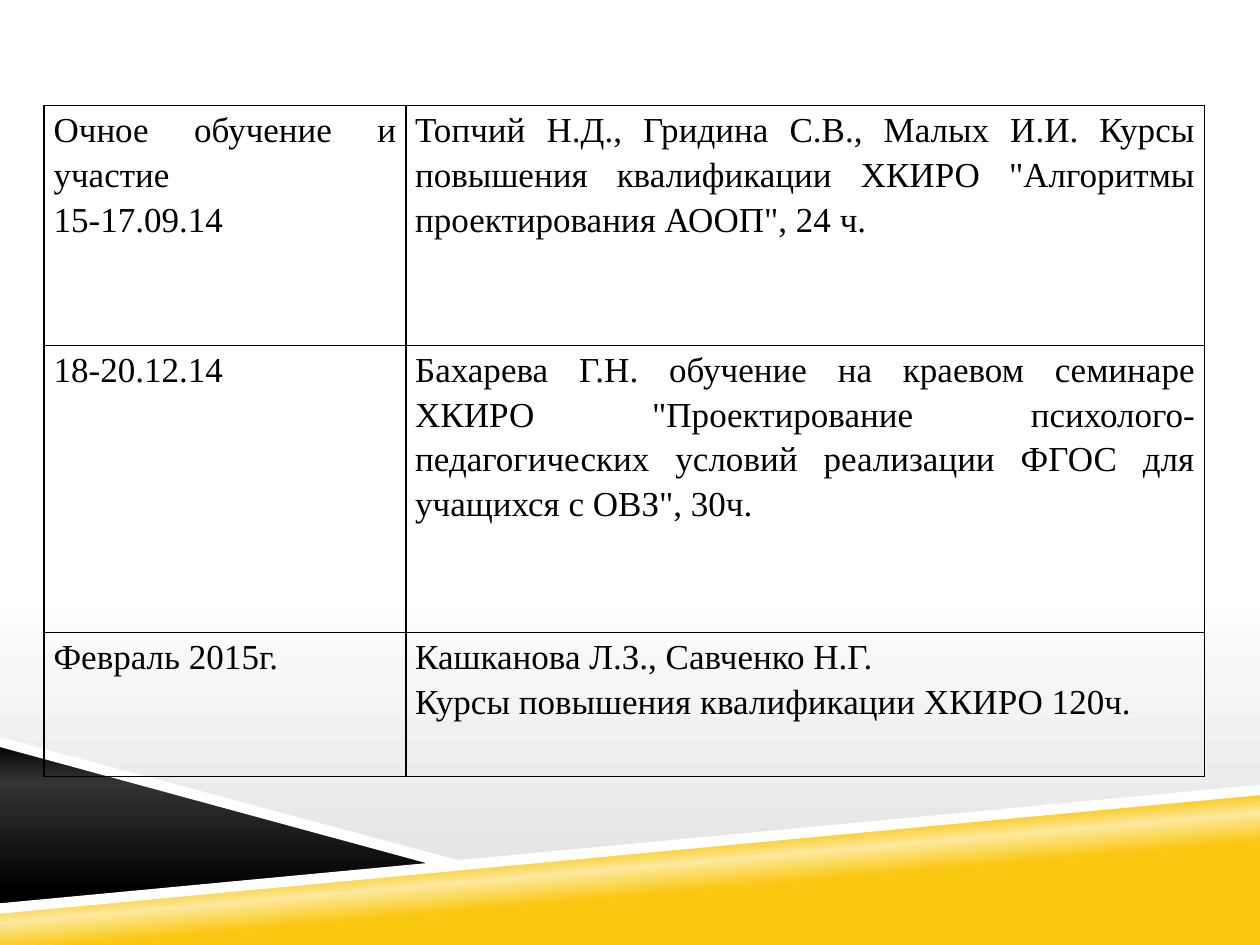
"""Build a slide with a table of staff training over a black and yellow wedge backdrop."""
from dataclasses import dataclass

from lxml import etree
from pptx import Presentation
from pptx.dml.color import RGBColor
from pptx.dml.fill import FillFormat
from pptx.enum import text
from pptx.oxml import ns
from pptx.slide import Slide
from pptx.table import _Cell
from pptx.util import Cm, Pt


@dataclass(frozen=True)
class Theme:
    font: str = "Times New Roman"
    size: float = 20
    spacing: float = 1.15
    border: float = 1
    black: str = "000000"
    charcoal: str = "333333"
    white: str = "FFFFFF"
    grey: str = "E6E6E6"
    yellow: str = "FAC810"
    cream: str = "FDE99F"


@dataclass(frozen=True)
class Gradient:
    angle: float
    stops: tuple[tuple[int, str], ...]


@dataclass(frozen=True)
class Wedge:
    points: tuple[tuple[float, float], ...]
    paint: Gradient | str


@dataclass(frozen=True)
class Training:
    height: float
    period: str
    details: str


THEME = Theme()
WIDTH, HEIGHT = 25.4, 19.05
TABLE_LEFT, TABLE_TOP = 0.89, 2.13
COLUMNS = (7.29, 16.1)
CELL_MARGIN = 0.19

BACKDROP = Gradient(90, ((0, THEME.white), (62, THEME.white), (90, THEME.grey), (100, THEME.white)))
GOLD = Gradient(265, ((39, THEME.yellow), (50, THEME.cream), (58, THEME.yellow)))
COAL = Gradient(90, ((0, THEME.black), (24, THEME.charcoal), (90, THEME.black)))

WEDGES = (
    Wedge(((0, 18.31), (WIDTH, 15.93), (WIDTH, HEIGHT), (0, HEIGHT)), GOLD),
    Wedge(((0, 14.96), (9.12, 17.4), (0, 18.31)), COAL),
    Wedge(((WIDTH, 15.82), (0, 18.21), (0, 18.42), (WIDTH, 16.03)), THEME.white),
    Wedge(((0, 14.86), (0, 15.06), (8.89, 17.48), (9.53, 17.42)), THEME.white),
)

TRAININGS = (
    Training(
        4.83,
        "Очное обучение и участие\n15-17.09.14",
        "Топчий Н.Д., Гридина С.В., Малых И.И. Курсы повышения квалификации ХКИРО "
        '"Алгоритмы проектирования АООП", 24 ч.',
    ),
    Training(
        5.79,
        "18-20.12.14",
        'Бахарева Г.Н. обучение на краевом семинаре ХКИРО "Проектирование '
        'психолого-педагогических условий реализации ФГОС для учащихся с ОВЗ", 30ч.',
    ),
    Training(
        2.9,
        "Февраль 2015г.",
        "Кашканова Л.З., Савченко Н.Г.\nКурсы повышения квалификации ХКИРО 120ч.",
    ),
)


def add_color(parent: etree._Element, color: str) -> None:
    """Append an RGB colour element."""
    etree.SubElement(parent, ns.qn("a:srgbClr"), val=color)


def apply_gradient(fill: FillFormat, owner: etree._Element, gradient: Gradient) -> None:
    """Give a fill the stops and the clockwise angle of a gradient."""
    fill.gradient()
    fill.gradient_angle = 360 - gradient.angle
    stops = owner.find(f".//{ns.qn('a:gsLst')}")
    for stop in list(stops):
        stops.remove(stop)
    for position, color in gradient.stops:
        add_color(etree.SubElement(stops, ns.qn("a:gs"), pos=str(position * 1000)), color)


def draw_wedge(page: Slide, wedge: Wedge) -> None:
    """Draw one closed outline without a line."""
    first, *rest = [(Cm(x), Cm(y)) for x, y in wedge.points]
    builder = page.shapes.build_freeform(*first)
    builder.add_line_segments(rest, close=True)
    shape = builder.convert_to_shape()
    shape.shadow.inherit = False
    shape.line.fill.background()
    if isinstance(wedge.paint, Gradient):
        apply_gradient(shape.fill, shape.element, wedge.paint)
    else:
        shape.fill.solid()
        shape.fill.fore_color.rgb = RGBColor.from_string(wedge.paint)


def draw_borders(cell: _Cell) -> None:
    """Put a thin line on the four sides of a cell."""
    properties = cell._tc.get_or_add_tcPr()
    for index, side in enumerate(("lnL", "lnR", "lnT", "lnB")):
        line = etree.Element(ns.qn(f"a:{side}"), w=str(Pt(THEME.border)))
        add_color(etree.SubElement(line, ns.qn("a:solidFill")), THEME.black)
        properties.insert(index, line)


def write_cell(cell: _Cell, wording: str) -> None:
    """Fill a cell with justified paragraphs on a clear ground."""
    cell.fill.background()
    cell.margin_left = cell.margin_right = Cm(CELL_MARGIN)
    cell.margin_top = cell.margin_bottom = 0
    cell.text_frame.text = wording
    for para in cell.text_frame.paragraphs:
        para.alignment = text.PP_ALIGN.JUSTIFY
        para.line_spacing = THEME.spacing
        for span in para.runs:
            span.font.name = THEME.font
            span.font.size = Pt(THEME.size)
            span.font.color.rgb = RGBColor.from_string(THEME.black)
    draw_borders(cell)


def draw_table(page: Slide, trainings: tuple[Training, ...]) -> None:
    """Draw the table of training periods and courses."""
    frame = page.shapes.add_table(
        len(trainings), len(COLUMNS), Cm(TABLE_LEFT), Cm(TABLE_TOP),
        Cm(sum(COLUMNS)), Cm(sum(training.height for training in trainings)),
    )
    table = frame.table
    table.first_row = table.horz_banding = False
    for column, width in zip(table.columns, COLUMNS):
        column.width = Cm(width)
    for row, training in zip(table.rows, trainings):
        row.height = Cm(training.height)
        for cell, wording in zip(row.cells, (training.period, training.details)):
            write_cell(cell, wording)


def main() -> None:
    """Build and save the deck."""
    deck = Presentation()
    deck.slide_width, deck.slide_height = Cm(WIDTH), Cm(HEIGHT)
    page = deck.slides.add_slide(deck.slide_layouts.get_by_name("Blank"))
    apply_gradient(page.background.fill, page.element, BACKDROP)
    for wedge in WEDGES:
        draw_wedge(page, wedge)
    draw_table(page, TRAININGS)
    deck.save("out.pptx")


if __name__ == "__main__":
    main()
